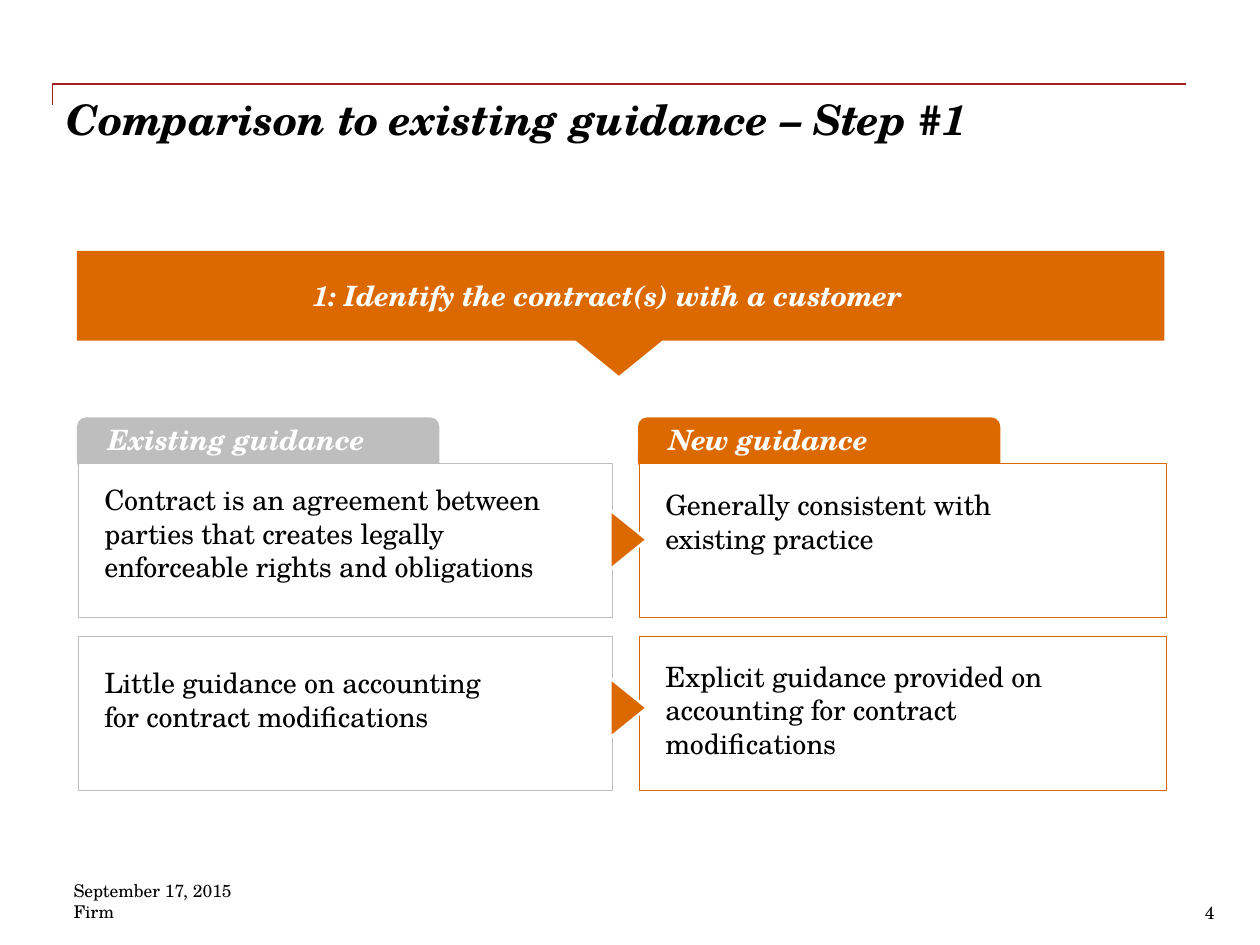
from pptx import Presentation
from pptx.dml.color import RGBColor
from pptx.enum.shapes import MSO_SHAPE
from pptx.enum.text import PP_ALIGN
from pptx.util import Pt

RECTANGLE = MSO_SHAPE.RECTANGLE
TAB = MSO_SHAPE.ROUNDED_RECTANGLE
LEFT, RIGHT = PP_ALIGN.LEFT, PP_ALIGN.RIGHT
FONT = "TeX Gyre Schola"
COLORS = {
    "orange": "DC6900",
    "gray": "BEBEBE",
    "red": "A32020",
    "white": "FFFFFF",
    "black": "000000",
}


def color(name):
    """Return the named palette color."""
    return RGBColor.from_string(COLORS[name])


def paint(shape, fill=None, line=None, weight=0.25):
    """Set the fill and outline of a shape and drop its shadow."""
    shape.shadow.inherit = False
    if fill:
        shape.fill.solid()
        shape.fill.fore_color.rgb = color(fill)
    else:
        shape.fill.background()
    if line:
        shape.line.color.rgb = color(line)
        shape.line.width = Pt(weight)
    else:
        shape.line.fill.background()


def add_block(page, kind, left, top, width, height, **style):
    """Add a painted preset shape."""
    shape = page.shapes.add_shape(kind, Pt(left), Pt(top), Pt(width), Pt(height))
    paint(shape, **style)
    return shape


def add_outline(page, points, close=True, **style):
    """Add a painted freeform through the given points."""
    corners = [(Pt(x), Pt(y)) for x, y in points]
    builder = page.shapes.build_freeform(*corners[0])
    builder.add_line_segments(corners[1:], close=close)
    paint(builder.convert_to_shape(), **style)


def add_text(page, lines, left, top, width, height, size=16, ink="black",
             bold=False, align=LEFT, tracking=-10):
    """Add a text box with one paragraph for each line."""
    box = page.shapes.add_textbox(Pt(left), Pt(top), Pt(width), Pt(height))
    frame = box.text_frame
    frame.word_wrap = True
    frame.margin_left = frame.margin_right = 0
    frame.margin_top = frame.margin_bottom = 0
    frame.text = "\n".join(lines)
    for para in frame.paragraphs:
        para.alignment = align
        para.font.name = FONT
        para.font.size = Pt(size)
        para.font.bold = para.font.italic = bold
        para.font.color.rgb = color(ink)
        for span in para.runs:
            span._r.get_or_add_rPr().set("spc", str(tracking))


def add_heading(page, left, top, width):
    """Draw the corner rule and the title below it."""
    rule = [(left, top + 12), (left, top), (left + width, top)]
    add_outline(page, rule, close=False, line="red", weight=1)
    add_text(page, ["Comparison to existing guidance – Step #1"],
             left + 8, top + 5.3, 646, 30, size=24, bold=True)


def add_banner(page, left, top, width, height):
    """Draw the step banner with its pointer."""
    middle, base = left + width / 2 - 1, top + height
    add_outline(page, [(middle - 29.5, base - 4), (middle + 29.5, base - 4),
                       (middle, base + 20)], fill="orange")
    add_block(page, RECTANGLE, left, top, width, height, fill="orange")
    add_text(page, ["1: Identify the contract(s) with a customer"],
             left + 134.7, top + 16, 360, 20, ink="white", bold=True)


def add_column(page, left, top, width, accent, label, cards):
    """Draw a labeled tab with a stack of text cards below it."""
    tab = add_block(page, TAB, left, top, 207, 31, fill=accent)
    tab.adjustments[0] = 0.17
    for row, (lines, offset, text_width, borders) in enumerate(cards):
        card_top = top + 26.5 + row * 98.8
        for border, weight in borders:
            add_block(page, RECTANGLE, left + 0.7, card_top, width, 88,
                      fill="white", line=border, weight=weight)
        add_text(page, lines, left + 15.6, card_top + offset, text_width, 40)
    add_text(page, [label], left + 17.7, top + 2.7, 160, 20, ink="white", bold=True)


def add_arrow(page, left, top, width, height):
    """Draw a right-pointing triangle edged in white."""
    add_outline(page, [(left, top), (left + width, top + height / 2),
                       (left, top + height)],
                fill="orange", line="white", weight=1.56)


def add_footer(page, left, top):
    """Place the date, firm and page number."""
    add_text(page, ["September 17, 2015", "Firm"], left, top, 204, 30,
             size=10, tracking=0)
    add_text(page, ["4"], left + 532, top + 12.8, 120, 12, size=10,
             align=RIGHT, tracking=0)


def main():
    """Build the comparison slide."""
    deck = Presentation()
    deck.slide_width, deck.slide_height = Pt(720), Pt(540)
    page = deck.slides.add_slide(deck.slide_layouts[6])
    gray, orange = ("gray", 0.25), ("orange", 0.25)
    existing = [
        (["Contract is an agreement between parties that creates legally "
          "enforceable rights and obligations"], 10.8, 271, [gray]),
        (["Little guidance on accounting for contract modifications"],
         16.6, 235, [gray]),
    ]
    new = [
        (["Generally consistent with existing practice"],
         13.6, 240, [("red", 0.75), orange]),
        (["Explicit guidance provided on",
          "accounting for contract modifications"], 12.8, 267, [orange]),
    ]
    add_heading(page, 30, 48, 648)
    add_banner(page, 44, 143.3, 621.4, 51.4)
    add_column(page, 44, 238.5, 305.3, "gray", "Existing guidance", existing)
    add_column(page, 364.6, 238.5, 301.3, "orange", "New guidance", new)
    for top in (291.4, 387.5):
        add_arrow(page, 348.7, top, 21, 34)
    add_footer(page, 42, 502.6)
    deck.save("out.pptx")


if __name__ == "__main__":
    main()
